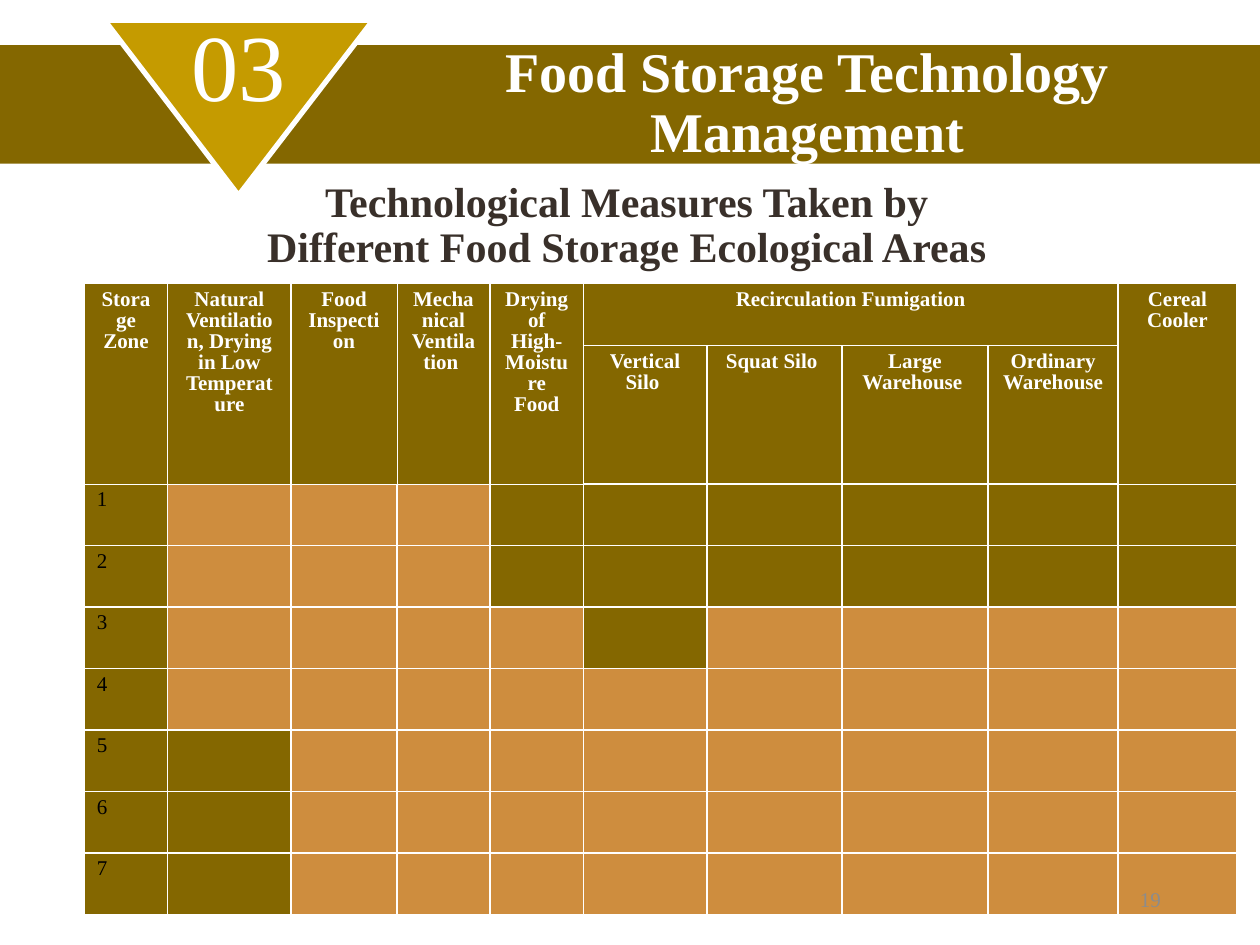
"""Build the food storage slide with its table of measures by ecological area."""
import pptx
import pptx.dml.color
import pptx.enum.shapes
import pptx.enum.text
import pptx.oxml
import pptx.oxml.ns
import pptx.util

Cm = pptx.util.Cm
Pt = pptx.util.Pt
ALIGN = pptx.enum.text.PP_ALIGN
ANCHOR = pptx.enum.text.MSO_ANCHOR
COLORS = {
    "olive": "846700",
    "gold": "C59B00",
    "orange": "CE8D3E",
    "white": "FFFFFF",
    "black": "000000",
    "brown": "39302A",
    "gray": "8C8C8C",
}


def paint(fill, color):
    fill.solid()
    fill.fore_color.rgb = pptx.dml.color.RGBColor.from_string(COLORS[color])


def write(frame, text, size, color, bold=False, alignment=ALIGN.CENTER, **frame_format):
    for name, value in {"word_wrap": True, **frame_format}.items():
        setattr(frame, name, value)
    paragraph = frame.paragraphs[0]
    for name, value in {"alignment": alignment, "line_spacing": 0.9}.items():
        setattr(paragraph, name, value)
    run = paragraph.add_run()
    run.text = text
    for name, value in {"name": "Times New Roman", "size": Pt(size), "bold": bold}.items():
        setattr(run.font, name, value)
    paint(run.font.fill, color)


presentation = pptx.Presentation()
presentation.slide_width = Cm(25.4)
presentation.slide_height = Cm(19.05)
slide = presentation.slides.add_slide(presentation.slide_layouts[6])

band = slide.shapes.add_shape(
    pptx.enum.shapes.MSO_SHAPE.RECTANGLE, Cm(-0.08), Cm(0.91), Cm(25.48), Cm(2.39)
)
band.shadow.inherit = False
paint(band.fill, "olive")
band.line.fill.background()
write(band.text_frame, "Food Storage Technology Management", 32, "white", True,
      margin_left=Cm(7.49), vertical_anchor=ANCHOR.MIDDLE)

builder = slide.shapes.build_freeform(Cm(2.11), Cm(0.41))
builder.add_line_segments([(Cm(7.52), Cm(0.41)), (Cm(4.81), Cm(3.94))], close=True)
triangle = builder.convert_to_shape()
triangle.shadow.inherit = False
paint(triangle.fill, "gold")
paint(triangle.line.fill, "white")
triangle.line.width = Pt(3)
write(triangle.text_frame, "03", 54, "white",
      margin_top=0, margin_bottom=Cm(1.5), vertical_anchor=ANCHOR.MIDDLE)

column_widths = [1.68, 2.49, 2.13, 1.88, 1.88, 2.49, 2.72, 2.95, 2.62, 2.39]
row_heights = [1.24, 1.73] + [1.24] * 7
table = slide.shapes.add_table(
    len(row_heights), len(column_widths), Cm(1.7), Cm(5.72),
    Cm(sum(column_widths)), Cm(sum(row_heights))
).table
table.first_row = False
table.horz_banding = False
for column, width in zip(table.columns, column_widths):
    column.width = Cm(width)
for row, height in zip(table.rows, row_heights):
    row.height = Cm(height)

headers = {
    (0, 0): "Storage Zone",
    (0, 1): "Natural Ventilation, Drying in Low Temperature",
    (0, 2): "Food Inspection",
    (0, 3): "Mechanical Ventilation ",
    (0, 4): "Drying of High-Moisture Food",
    (0, 5): "Recirculation Fumigation",
    (0, 9): "Cereal Cooler",
    (1, 5): "Vertical Silo ",
    (1, 6): "Squat Silo ",
    (1, 7): "Large Warehouse ",
    (1, 8): "Ordinary Warehouse",
}
measures_by_zone = [
    {1, 2, 3},
    {1, 2, 3},
    {1, 2, 3, 4, 6, 7, 8, 9},
    set(range(1, 10)),
    set(range(2, 10)),
    set(range(2, 10)),
    set(range(2, 10)),
]

for row_index in range(len(row_heights)):
    for column_index in range(len(column_widths)):
        cell = table.cell(row_index, column_index)
        is_header = row_index < 2
        is_taken = not is_header and column_index in measures_by_zone[row_index - 2]
        paint(cell.fill, "orange" if is_taken else "olive")
        thin_edges = {
            "L": is_header and column_index == 3,
            "R": is_header and column_index == 2,
            "T": row_index in (1, 2),
            "B": row_index == 0,
        }
        properties = cell._tc.get_or_add_tcPr()
        for position, (edge, is_thin) in enumerate(thin_edges.items()):
            width = Pt(0.25 if is_thin else 1)
            properties.insert(position, pptx.oxml.parse_xml(
                f'<a:ln{edge} {pptx.oxml.ns.nsdecls("a")} w="{width}"><a:solidFill>'
                f'<a:srgbClr val="{COLORS["white"]}"/></a:solidFill></a:ln{edge}>'
            ))
        if (row_index, column_index) in headers:
            write(cell.text_frame, headers[row_index, column_index], 12, "white", True)
        elif column_index == 0 and not is_header:
            write(cell.text_frame, str(row_index - 1), 12, "black", alignment=ALIGN.LEFT)

for column_index in (0, 1, 2, 3, 4, 9):
    table.cell(0, column_index).merge(table.cell(1, column_index))
table.cell(0, 5).merge(table.cell(0, 8))

subtitle = slide.shapes.add_textbox(Cm(4.8), Cm(3.53), Cm(15.67), Cm(2.11))
write(subtitle.text_frame,
      "Technological Measures Taken by Different Food Storage Ecological Areas",
      24, "brown", True)

page_number = slide.shapes.add_textbox(Cm(17.93), Cm(17.65), Cm(5.72), Cm(1.02))
write(page_number.text_frame, "19", 12, "gray", alignment=ALIGN.RIGHT,
      vertical_anchor=ANCHOR.MIDDLE)

presentation.save("out.pptx")
